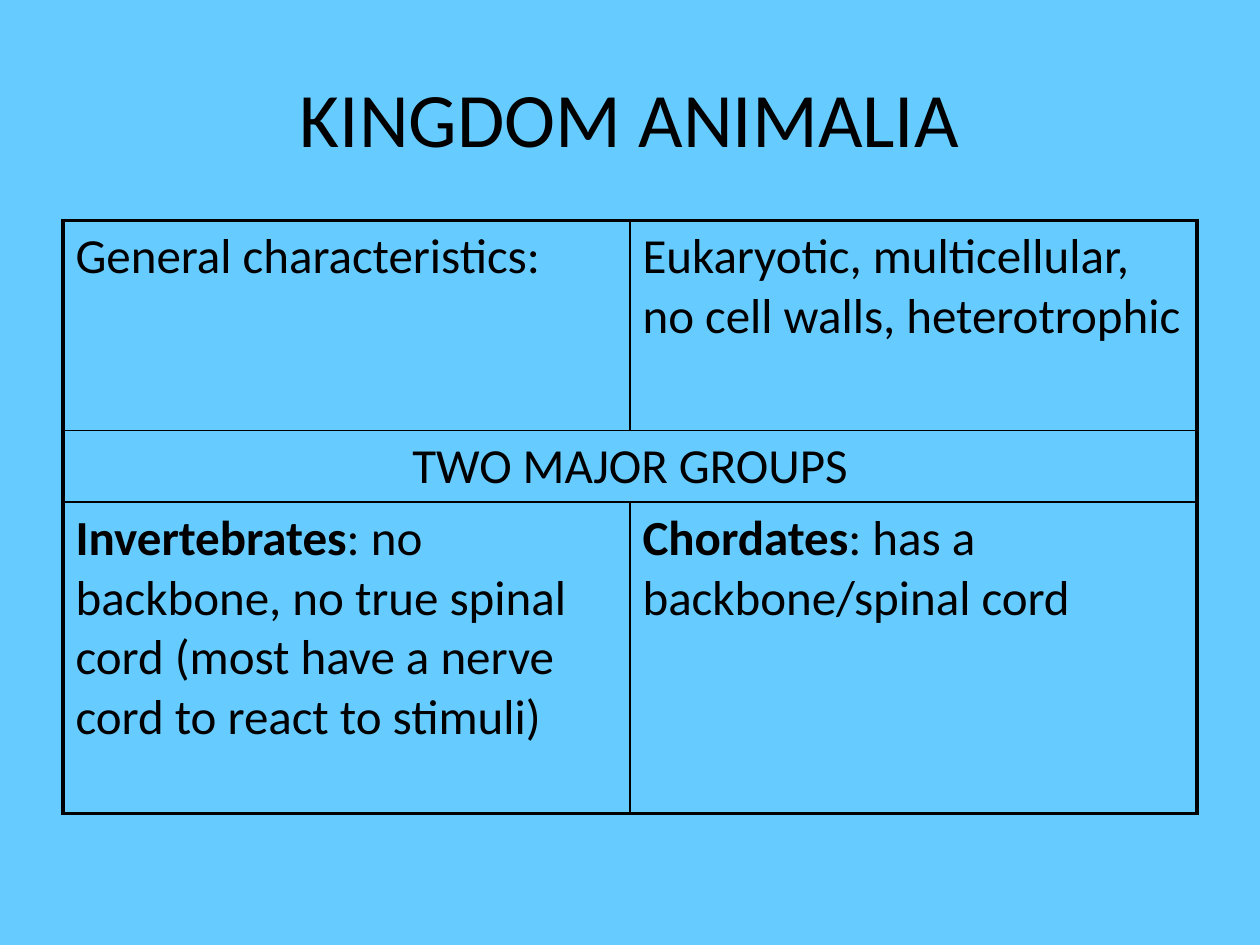
"""Build the Kingdom Animalia slide with its table of characteristics and groups."""
from lxml.etree import SubElement
from pptx import Presentation
from pptx.dml.color import RGBColor
from pptx.enum.text import MSO_ANCHOR as Anchor, PP_ALIGN as Align
from pptx.oxml.ns import qn
from pptx.util import Pt

SKY = RGBColor(0x66, 0xCC, 0xFF)
BLACK = RGBColor(0x00, 0x00, 0x00)
OUTER, INNER = Pt(2.25), Pt(1)
ROW_HEIGHTS = [120, 41, 178]
COLUMN_WIDTHS = [324, 324]
CELLS = [
    [[("General characteristics:", False)],
     [("Eukaryotic, multicellular, no cell walls, heterotrophic", False)]],
    [[("TWO MAJOR GROUPS", False)], []],
    [[("Invertebrates", True),
      (": no backbone, no true spinal cord (most have a nerve cord to react to stimuli)", False)],
     [("Chordates", True), (": has a backbone/spinal cord", False)]],
]


def write(para, spans, size):
    for text, bold in spans:
        span = para.add_run()
        span.text = text
        for name, value in {"name": "Calibri", "size": Pt(size), "bold": bold}.items():
            setattr(span.font, name, value)
        span.font.color.rgb = BLACK


def draw_border(cell, side, width):
    line = SubElement(cell._tc.get_or_add_tcPr(), qn(f"a:ln{side}"), w=str(width))
    fill = SubElement(line, qn("a:solidFill"))
    SubElement(fill, qn("a:srgbClr"), val=str(BLACK))


deck = Presentation()
deck.slide_width, deck.slide_height = Pt(720), Pt(540)
page = deck.slides.add_slide(deck.slide_layouts[6])
page.background.fill.solid()
page.background.fill.fore_color.rgb = SKY

title = page.shapes.add_textbox(Pt(36), Pt(21.6), Pt(648), Pt(90)).text_frame
title.word_wrap = True
title.vertical_anchor = Anchor.MIDDLE
title.paragraphs[0].alignment = Align.CENTER
write(title.paragraphs[0], [("KINGDOM ANIMALIA", False)], 44)

table = page.shapes.add_table(
    len(ROW_HEIGHTS), len(COLUMN_WIDTHS), Pt(36), Pt(126),
    Pt(sum(COLUMN_WIDTHS)), Pt(sum(ROW_HEIGHTS))).table
table.first_row = table.horz_banding = False
for column, width in zip(table.columns, COLUMN_WIDTHS):
    column.width = Pt(width)
for row, height in zip(table.rows, ROW_HEIGHTS):
    row.height = Pt(height)
table.cell(1, 0).merge(table.cell(1, 1))

last_row, last_column = len(ROW_HEIGHTS) - 1, len(COLUMN_WIDTHS) - 1
for r, row_cells in enumerate(CELLS):
    for c, spans in enumerate(row_cells):
        cell = table.cell(r, c)
        on_edge = {"L": c == 0, "R": c == last_column or cell.is_merge_origin,
                   "T": r == 0, "B": r == last_row}
        for side, outside in on_edge.items():
            draw_border(cell, side, OUTER if outside else INNER)
        cell.fill.background()
        para = cell.text_frame.paragraphs[0]
        para.alignment = Align.CENTER if cell.is_merge_origin else Align.LEFT
        write(para, spans, 28)

deck.save("out.pptx")
